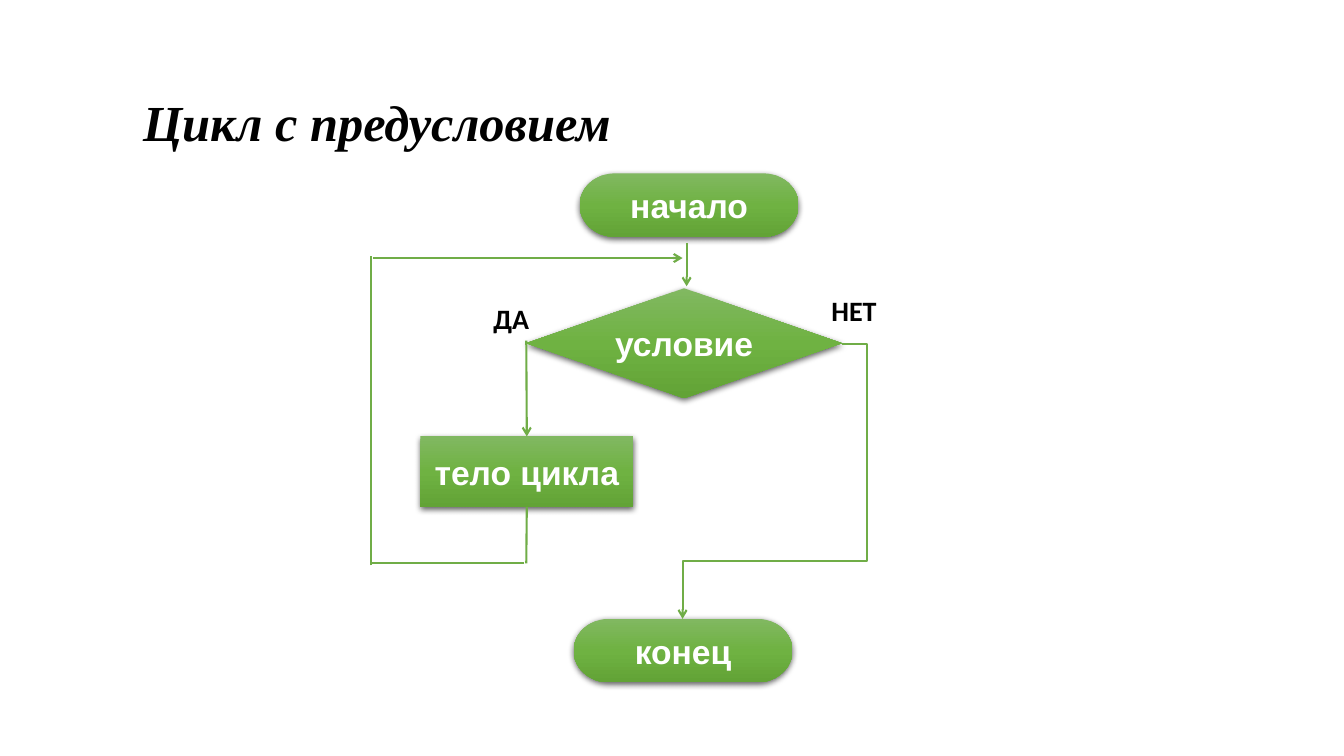
from dataclasses import dataclass
import copy

import pptx
import pptx.dml.color
import pptx.enum.shapes
import pptx.enum.text
import pptx.oxml
import pptx.oxml.ns
import pptx.shapes.autoshape
import pptx.shapes.connector
import pptx.util
from lxml import etree

Inches = pptx.util.Inches
Pt = pptx.util.Pt
SHAPE = pptx.enum.shapes.MSO_SHAPE
LINK = pptx.enum.shapes.MSO_CONNECTOR
ALIGN = pptx.enum.text.PP_ALIGN
qn = pptx.oxml.ns.qn

COLORS = {"top": "81B861", "mid": "6FB242", "low": "62A336",
          "line": "70AD47", "ink": "000000", "white": "FFFFFF"}


@dataclass
class Node:
    text: str
    kind: pptx.enum.shapes.MSO_SHAPE
    left: float
    top: float
    width: float
    height: float


@dataclass
class Label:
    text: str
    left: float
    top: float
    width: float
    height: float
    size: int = 20
    font: str = "Calibri"
    italic: bool = False
    align: pptx.enum.text.PP_ALIGN = ALIGN.CENTER
    space: float = 1.0


@dataclass
class Line:
    x1: float
    y1: float
    x2: float
    y2: float
    arrow: bool = False
    kind: pptx.enum.shapes.MSO_CONNECTOR = LINK.STRAIGHT


def rgb(name: str) -> pptx.dml.color.RGBColor:
    return pptx.dml.color.RGBColor.from_string(COLORS[name])


def style(para, size: int, font: str, color: str, align, italic: bool = False) -> None:
    para.alignment = align
    for run in para.runs:
        run.font.size = Pt(size)
        run.font.name = font
        run.font.bold = True
        run.font.italic = italic
        run.font.color.rgb = rgb(color)


def shade(shape: pptx.shapes.autoshape.Shape) -> None:
    """Green vertical gradient with a soft shadow below."""
    shape.fill.gradient()
    shape.fill.gradient_angle = 270
    stops = shape._element.spPr.find(".//" + qn("a:gsLst"))
    stops.append(copy.deepcopy(stops[0]))
    for i, (stop, name) in enumerate(zip(shape.fill.gradient_stops, ("top", "mid", "low"))):
        stop.position = i / 2
        stop.color.rgb = rgb(name)
    shape.line.fill.background()
    shape.shadow.inherit = False
    glow = etree.SubElement(
        shape._element.spPr.find(qn("a:effectLst")), qn("a:outerShdw"),
        blurRad=str(Pt(4.5)), dist=str(Pt(1.5)), dir="5400000",
        algn="ctr", rotWithShape="0")
    tint = etree.SubElement(glow, qn("a:srgbClr"), val=COLORS["ink"])
    etree.SubElement(tint, qn("a:alpha"), val="63000")


def add_node(slide, node: Node) -> pptx.shapes.autoshape.Shape:
    shape = slide.shapes.add_shape(
        node.kind, Inches(node.left), Inches(node.top),
        Inches(node.width), Inches(node.height))
    shade(shape)
    frame = shape.text_frame
    frame.text = node.text
    frame.vertical_anchor = pptx.enum.text.MSO_ANCHOR.MIDDLE
    if node.kind == SHAPE.FLOWCHART_DECISION:
        frame.margin_left = frame.margin_right = Inches(0.08)
        frame.margin_top = frame.margin_bottom = Inches(0.04)
    style(frame.paragraphs[0], 24, "Arial", "white", ALIGN.CENTER)
    return shape


def add_label(slide, label: Label) -> None:
    box = slide.shapes.add_textbox(
        Inches(label.left), Inches(label.top),
        Inches(label.width), Inches(label.height))
    frame = box.text_frame
    frame.word_wrap = True
    frame.auto_size = pptx.enum.text.MSO_AUTO_SIZE.SHAPE_TO_FIT_TEXT
    frame.text = label.text
    para = frame.paragraphs[0]
    para.line_spacing = label.space
    style(para, label.size, label.font, "ink", label.align, label.italic)


def add_line(slide, line: Line) -> pptx.shapes.connector.Connector:
    link = slide.shapes.add_connector(
        line.kind, Inches(line.x1), Inches(line.y1), Inches(line.x2), Inches(line.y2))
    link.line.color.rgb = rgb("line")
    link.line.width = Pt(1.5)
    if line.arrow:
        etree.SubElement(link.line._get_or_add_ln(), qn("a:tailEnd"), type="arrow")
    etree.SubElement(link._element.spPr, qn("a:effectLst"))
    return link


def bend(link: pptx.shapes.connector.Connector, *turns: int) -> None:
    """Give an elbow connector three turns, placed in 1/100000 of its size."""
    geom = link._element.spPr.find(qn("a:prstGeom"))
    geom.set("prst", "bentConnector4")
    guides = geom.find(qn("a:avLst"))
    if guides is None:
        guides = etree.SubElement(geom, qn("a:avLst"))
    for i, turn in enumerate(turns, 1):
        etree.SubElement(guides, qn("a:gd"), name=f"adj{i}", fmla=f"val {turn}")


NODES = [
    Node("начало", SHAPE.FLOWCHART_TERMINATOR, 5.75, 1.72, 2.17, 0.63),
    Node("конец", SHAPE.FLOWCHART_TERMINATOR, 5.69, 6.14, 2.17, 0.63),
    Node("условие", SHAPE.FLOWCHART_DECISION, 5.22, 2.86, 3.13, 1.09),
]
BODY = Node("тело цикла", SHAPE.FLOWCHART_PROCESS, 4.17, 4.33, 2.11, 0.7)
LABELS = [
    Label("Цикл с предусловием", 1.32, 0.55, 10.82, 0.9, 36,
          "Times New Roman", True, ALIGN.JUSTIFY, 1.5),
    Label("ДА", 4.76, 2.94, 0.62, 0.44),
    Label("НЕТ", 8.04, 2.86, 0.86, 0.44),
]
ENTRY = Line(6.81, 2.41, 6.81, 2.84, True)
BACK = [
    Line(5.2, 5.59, 3.67, 5.59),
    Line(3.68, 5.61, 3.68, 2.54),
    Line(3.7, 2.56, 6.77, 2.56, True),
]
YES = Line(5.22, 3.38, 5.22, 4.33, True)
DOWN = Line(5.22, 5.03, 5.22, 5.59)
NO = Line(8.35, 3.41, 6.77, 6.14, True, LINK.ELBOW)


def main() -> None:
    deck = pptx.Presentation()
    deck.slide_width, deck.slide_height = Inches(13.33), Inches(7.5)
    slide = deck.slides.add_slide(deck.slide_layouts[6])

    # Title and branch labels
    for label in LABELS:
        add_label(slide, label)

    # Flowchart blocks
    for node in NODES:
        add_node(slide, node)
    body = add_node(slide, BODY)

    # Entry arrow and the way back to the condition
    for line in [ENTRY, *BACK]:
        add_line(slide, line)

    # Lines joined to the loop body
    add_line(slide, YES).end_connect(body, 0)
    add_line(slide, DOWN).begin_connect(body, 2)

    # Exit from the condition to the end
    bend(add_line(slide, NO), -15900, 79000)

    deck.save("out.pptx")


if __name__ == "__main__":
    main()
